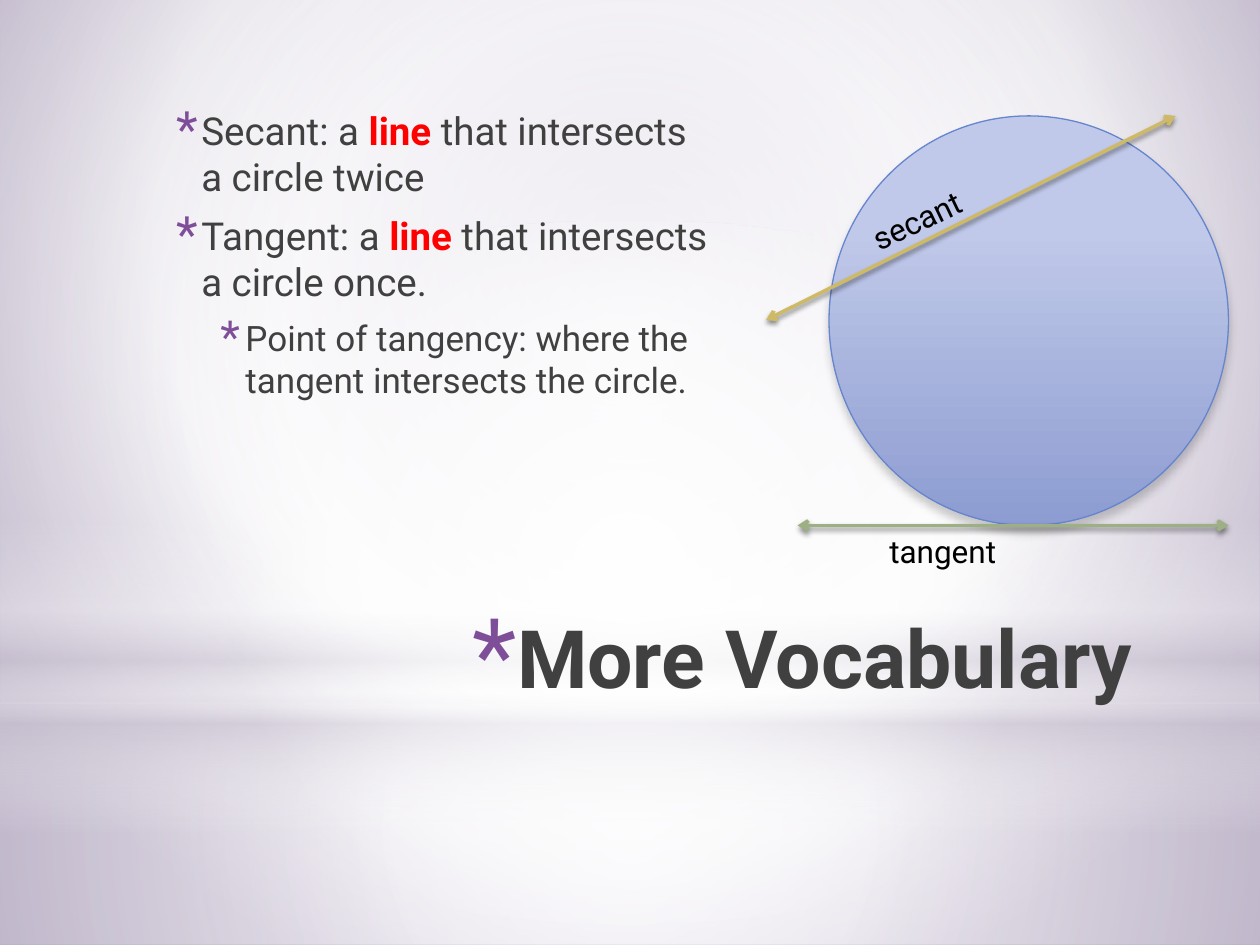
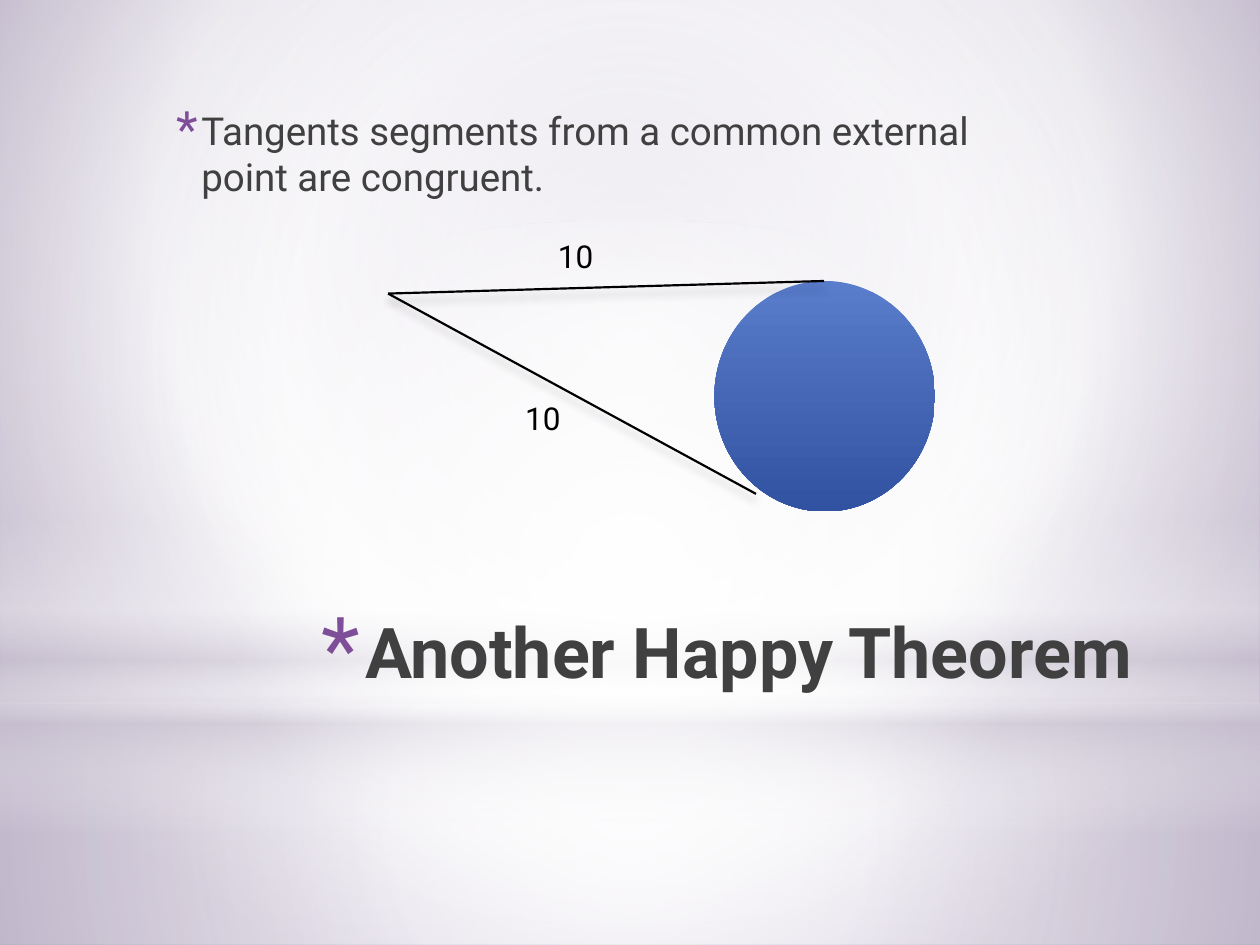
import pptx
import pptx.util
import pptx.dml.color
import pptx.enum.shapes
import pptx.enum.text
import pptx.oxml
import pptx.oxml.ns

PX = 9144
FONT = "Roboto"
INK, BLACK, RED, STAR = "404040", "000000", "FF0000", "7E4E99"
WHITE, LILAC = "FFFFFF", "C9C2D1"
NS = pptx.oxml.ns.nsdecls("a")
qn = pptx.oxml.ns.qn
xml = pptx.oxml.parse_xml
rgb = pptx.dml.color.RGBColor.from_string
Pt = pptx.util.Pt
KIND = pptx.enum.shapes.MSO_SHAPE
ALIGN = pptx.enum.text.PP_ALIGN


def paint(fill, props, stops, focus=None):
    fill.solid()
    marks = "".join(
        f'<a:gs pos="{pos * 1000}"><a:srgbClr val="{hue}">'
        f'<a:alpha val="{alpha * 1000}"/></a:srgbClr></a:gs>'
        for pos, hue, alpha in stops)
    if focus:
        left, top, right, base = [side * 1000 for side in focus]
        way = (f'<a:path path="circle"><a:fillToRect l="{left}" t="{top}" '
               f'r="{right}" b="{base}"/></a:path>')
    else:
        way = '<a:lin ang="5400000" scaled="0"/>'
    grad = xml(f'<a:gradFill {NS} rotWithShape="1"><a:gsLst>{marks}</a:gsLst>{way}</a:gradFill>')
    props.replace(props.find(qn("a:solidFill")), grad)


def write(slide, box, items, align=ALIGN.LEFT, bold=None):
    shape = slide.shapes.add_textbox(*[n * PX for n in box])
    frame = shape.text_frame
    frame.word_wrap = True
    for i, (text, size, hue, indent, hang, scale) in enumerate(items):
        para = frame.paragraphs[0] if i == 0 else frame.add_paragraph()
        para.alignment = align
        if scale:
            props = para._p.get_or_add_pPr()
            props.set("marL", str(indent * PX))
            props.set("indent", str(-hang * PX))
            for part in (f'<a:buClr {NS}><a:srgbClr val="{STAR}"/></a:buClr>',
                         f'<a:buSzPct {NS} val="{scale * 1000}"/>',
                         f'<a:buFont {NS} typeface="{FONT}"/>',
                         f'<a:buChar {NS} char="*"/>'):
                props.append(xml(part))
            if not bold:
                para.level = int(indent > 25)
                para.space_before = Pt(size * 0.2)
                para.space_after = Pt(3)
        font = para.font
        font.name, font.size, font.bold = FONT, Pt(size), bold
        font.color.rgb = rgb(hue)
        for j, piece in enumerate(text.split("|")):
            run = para.add_run()
            run.text = piece
            if j % 2:
                run.font.bold = True
                run.font.color.rgb = rgb(RED)
    return shape


CENTER = (50, 50, 50, 50)
BACK = [(0, "C1B7CD", 100), (60, WHITE, 100), (100, "A191B5", 100)]
BANDS = [
    (KIND.RECTANGLE, (0, 558, 1000, 192),
     [(0, WHITE, 91), (37, WHITE, 76), (100, LILAC, 79)], CENTER),
    (KIND.RECTANGLE, (0, 0, 1000, 558),
     [(0, WHITE, 89), (48, WHITE, 62), (100, LILAC, 79)], CENTER),
    (KIND.RECTANGLE, (0, 412, 1000, 250),
     [(0, WHITE, 0), (29, WHITE, 30), (45, LILAC, 40), (55, WHITE, 26),
      (65, LILAC, 60), (100, WHITE, 0)], None),
    (KIND.OVAL, (0, 175, 1000, 558),
     [(0, WHITE, 100), (56, WHITE, 0)], CENTER),
]
SOFT, FIRM = (20, 5, 4), (45, 3.1, 1.8)

PAGES = [
    dict(title="More Vocabulary", size=46, width=450,
         body=[("Secant: a |line| that intersects a circle twice", 22, 25),
               ("Tangent: a |line| that intersects a circle once.", 22, 25),
               ("Point of tangency: where the tangent intersects the circle.", 20, 60)],
         circle=(658, 92, 317, 325), edge="6585CF",
         stops=[(28, "C0C9E9", 100), (100, "8D9CD1", 100)],
         lines=[((608, 254, 933, 92), "CEB966"), ((633, 417, 975, 417), "9CB084")],
         weight=2, arrows=True, shade=FIRM,
         labels=[("secant", (677, 139, 167, 42), 334.4),
                 ("tangent", (696, 417, 217, 42), 0)]),
    dict(title="Another Happy Theorem", size=40, width=700,
         body=[("Tangents segments from a common external point are congruent.", 22, 25)],
         circle=(567, 223, 175, 183), edge=None,
         stops=[(0, "597CCB", 100), (100, "3152A0", 100)],
         lines=[((654, 223, 308, 233), BLACK), ((308, 233, 600, 392), BLACK)],
         weight=1.25, arrows=False, shade=SOFT,
         labels=[("10", (433, 183, 75, 40), 0), ("10", (407, 312, 71, 40), 0)]),
]

deck = pptx.Presentation()
deck.slide_width, deck.slide_height = 1000 * PX, 750 * PX

for page in PAGES:
    slide = deck.slides.add_slide(deck.slide_layouts[6])
    fill = slide.background.fill
    fill.solid()
    paint(fill, next(slide.element.iter(qn("p:bgPr"))), BACK, (20, 10, 20, 60))
    for kind, box, stops, focus in BANDS:
        band = slide.shapes.add_shape(kind, *[n * PX for n in box])
        band.shadow.inherit = False
        band.line.fill.background()
        paint(band.fill, band._element.spPr, stops, focus)

    write(slide, (196, 478, 712, 125),
          [(page["title"], page["size"], INK, 35, 35, 128)], ALIGN.RIGHT, True)
    write(slide, (125, 80, page["width"], 380),
          [(text, size, INK, indent, 20, 130) for text, size, indent in page["body"]])

    disc = slide.shapes.add_shape(KIND.OVAL, *[n * PX for n in page["circle"]])
    disc.shadow.inherit = False
    paint(disc.fill, disc._element.spPr, page["stops"])
    shaded = []
    if page["edge"]:
        disc.line.color.rgb = rgb(page["edge"])
        disc.line.width = Pt(0.75)
        shaded.append((disc, SOFT))
    else:
        disc.line.fill.background()

    for ends, hue in page["lines"]:
        line = slide.shapes.add_connector(
            pptx.enum.shapes.MSO_CONNECTOR.STRAIGHT, *[n * PX for n in ends])
        line.line.color.rgb = rgb(hue)
        line.line.width = Pt(page["weight"])
        if page["arrows"]:
            for end in ("headEnd", "tailEnd"):
                line.line._ln.append(xml(f'<a:{end} {NS} type="arrow"/>'))
        shaded.append((line, page["shade"]))

    for shape, (alpha, blur, gap) in shaded:
        props = shape._element.spPr
        for old in props.findall(qn("a:effectLst")):
            props.remove(old)
        props.append(xml(
            f'<a:effectLst {NS}><a:outerShdw blurRad="{Pt(blur)}" dist="{Pt(gap)}" '
            f'dir="5400000" rotWithShape="0"><a:srgbClr val="{BLACK}">'
            f'<a:alpha val="{alpha * 1000}"/></a:srgbClr></a:outerShdw></a:effectLst>'))

    for text, box, turn in page["labels"]:
        label = write(slide, box, [(text, 18, BLACK, 0, 0, 0)])
        label.rotation = turn

deck.save("out.pptx")
